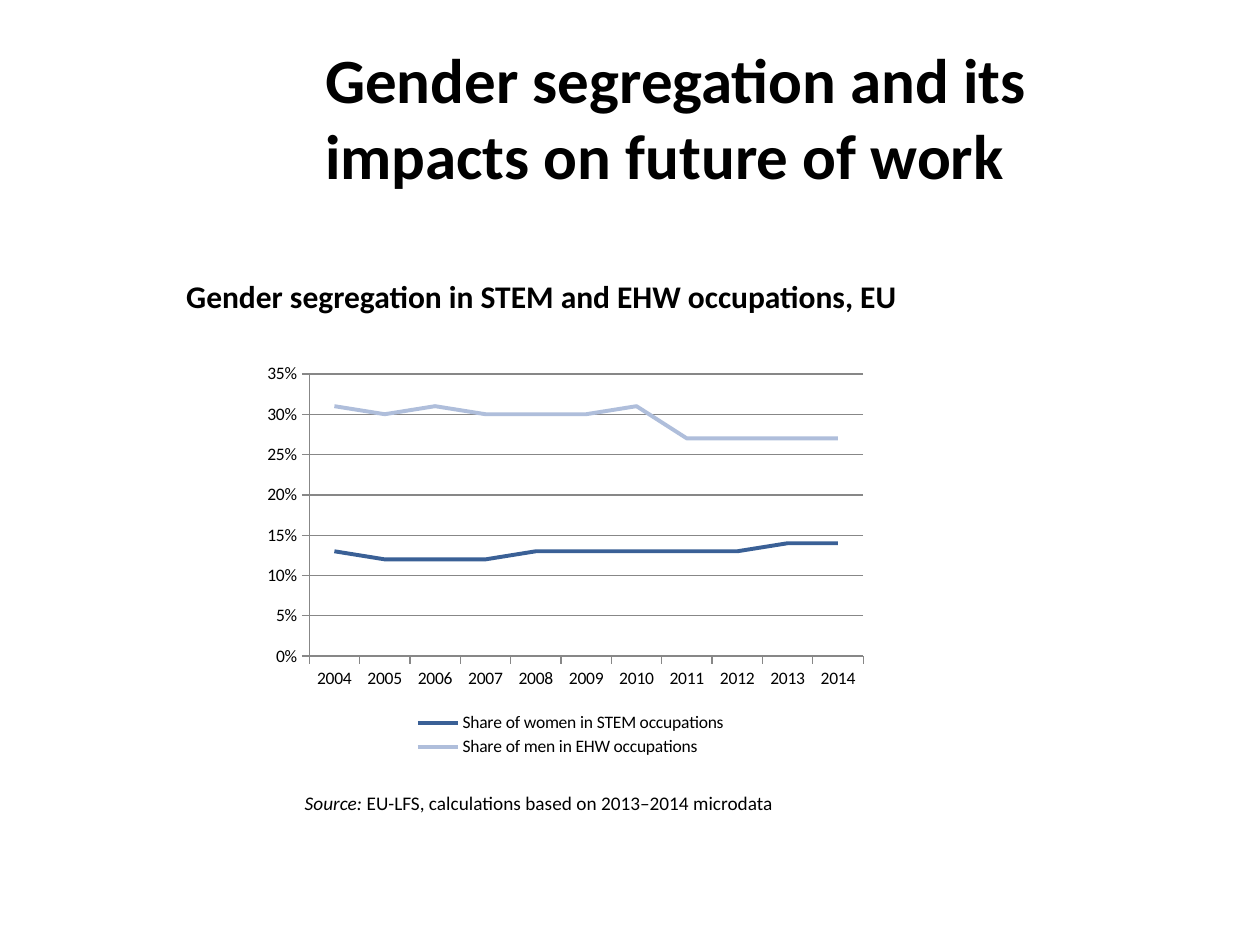
import pptx
import pptx.chart.data
import pptx.dml.color
import pptx.enum.chart
import pptx.enum.text
import pptx.oxml
import pptx.oxml.ns
import pptx.util

WIDTH, HEIGHT = 10, 7.5
FONT = "Calibri"
BLACK, AXIS_GREY = "000000", "878787"
YEARS = [str(year) for year in range(2004, 2015)]
SHARES = [
    ("Share of women in STEM occupations", "3A6096",
     [0.13, 0.12, 0.12, 0.12, 0.13, 0.13, 0.13, 0.13, 0.13, 0.14, 0.14]),
    ("Share of men in EHW occupations", "AFBEDB",
     [0.31, 0.3, 0.31, 0.3, 0.3, 0.3, 0.31, 0.27, 0.27, 0.27, 0.27]),
]


def color(value):
    """Turn a hex string into a colour."""
    return pptx.dml.color.RGBColor.from_string(value)


def box(left, top, width, height):
    """Turn inches into a left, top, width, height list."""
    return [pptx.util.Inches(length) for length in (left, top, width, height)]


def style_font(font, size, bold=False, italic=False):
    """Set the look shared by all text on the slide."""
    font.name, font.size = FONT, pptx.util.Pt(size)
    font.bold, font.italic = bold, italic
    font.color.rgb = color(BLACK)


def style_line(line, value, width):
    """Set colour and width of a line."""
    line.color.rgb = color(value)
    line.width = pptx.util.Pt(width)


def write_runs(paragraph, size, runs):
    """Add text run by run, each given as text, bold and italic."""
    for text, bold, italic in runs:
        run = paragraph.add_run()
        run.text = text
        style_font(run.font, size, bold, italic)


def add_heading(slide, text):
    """Fill and place the title placeholder."""
    heading = slide.shapes.title
    heading.left, heading.top, heading.width, heading.height = box(2.48, 0.3, 7.02, 1.25)
    frame = heading.text_frame
    frame.vertical_anchor = pptx.enum.text.MSO_ANCHOR.MIDDLE
    frame.paragraphs[0].alignment = pptx.enum.text.PP_ALIGN.LEFT
    write_runs(frame.paragraphs[0], 36, [(text, True, False)])


def add_caption(slide, place, size, runs):
    """Add a wrapping text box of one paragraph."""
    frame = slide.shapes.add_textbox(*box(*place)).text_frame
    frame.word_wrap = True
    frame.auto_size = pptx.enum.text.MSO_AUTO_SIZE.SHAPE_TO_FIT_TEXT
    write_runs(frame.paragraphs[0], size, runs)


def layout_xml(shares, target=""):
    """Build a manual chart layout from x, y, w, h shares."""
    sizes = "".join(f'<c:{key} val="{share}"/>' for key, share in zip("xywh", shares))
    return pptx.oxml.parse_xml(
        f'<c:layout {pptx.oxml.ns.nsdecls("c")}><c:manualLayout>{target}'
        f'<c:xMode val="edge"/><c:yMode val="edge"/>{sizes}</c:manualLayout></c:layout>')


def arrange_chart(chart):
    """Place the plot area and the stacked legend in the chart."""
    plot_area = chart.plots[0]._element.getparent()
    for old in plot_area.findall(pptx.oxml.ns.qn("c:layout")):
        plot_area.remove(old)
    plot_area.insert(0, layout_xml((0.09, 0.04, 0.89, 0.7), '<c:layoutTarget val="inner"/>'))
    legend = chart.legend._element
    for old in legend.findall(pptx.oxml.ns.qn("c:layout")):
        legend.remove(old)
    position = legend.find(pptx.oxml.ns.qn("c:legendPos"))
    position.addnext(layout_xml((0.24, 0.87, 0.54, 0.13)))


def add_share_chart(slide):
    """Add the line chart of occupation shares by year."""
    data = pptx.chart.data.CategoryChartData(number_format="0%")
    data.categories = YEARS
    for name, _, values in SHARES:
        data.add_series(name, values)
    chart = slide.shapes.add_chart(
        pptx.enum.chart.XL_CHART_TYPE.LINE, *box(2.01, 2.84, 4.94, 3.2), data).chart
    chart.has_title = False
    style_font(chart.font, 10)
    chart.has_legend = True
    chart.legend.position = pptx.enum.chart.XL_LEGEND_POSITION.BOTTOM
    chart.legend.include_in_layout = False
    chart.plots[0].vary_by_categories = False
    for series, (_, shade, _) in zip(chart.plots[0].series, SHARES):
        series.smooth = False
        style_line(series.format.line, shade, 2.25)
    for axis in (chart.category_axis, chart.value_axis):
        axis.major_tick_mark = pptx.enum.chart.XL_TICK_MARK.OUTSIDE
        style_line(axis.format.line, AXIS_GREY, 0.75)
    shares_axis = chart.value_axis
    shares_axis.minimum_scale, shares_axis.maximum_scale = 0, 0.35
    shares_axis.major_unit = 0.05
    shares_axis.has_major_gridlines = True
    style_line(shares_axis.major_gridlines.format.line, AXIS_GREY, 0.75)
    shares_axis.tick_labels.number_format = "0%"
    shares_axis.tick_labels.number_format_is_linked = False
    arrange_chart(chart)


def main():
    """Build and save the slide."""
    deck = pptx.Presentation()
    deck.slide_width, deck.slide_height = pptx.util.Inches(WIDTH), pptx.util.Inches(HEIGHT)
    slide = deck.slides.add_slide(deck.slide_layouts.get_by_name("Title Only"))
    add_heading(slide, "Gender segregation and its impacts on future of work")
    add_share_chart(slide)
    add_caption(slide, (2.32, 6.23, 5, 0.29), 11, [
        ("Source: ", False, True),
        ("EU-LFS, calculations based on 2013–2014 microdata", False, False)])
    add_caption(slide, (1.38, 2.15, 7.64, 0.4), 18, [
        ("Gender segregation in STEM and EHW occupations, EU", True, False)])
    deck.save("out.pptx")


if __name__ == "__main__":
    main()
